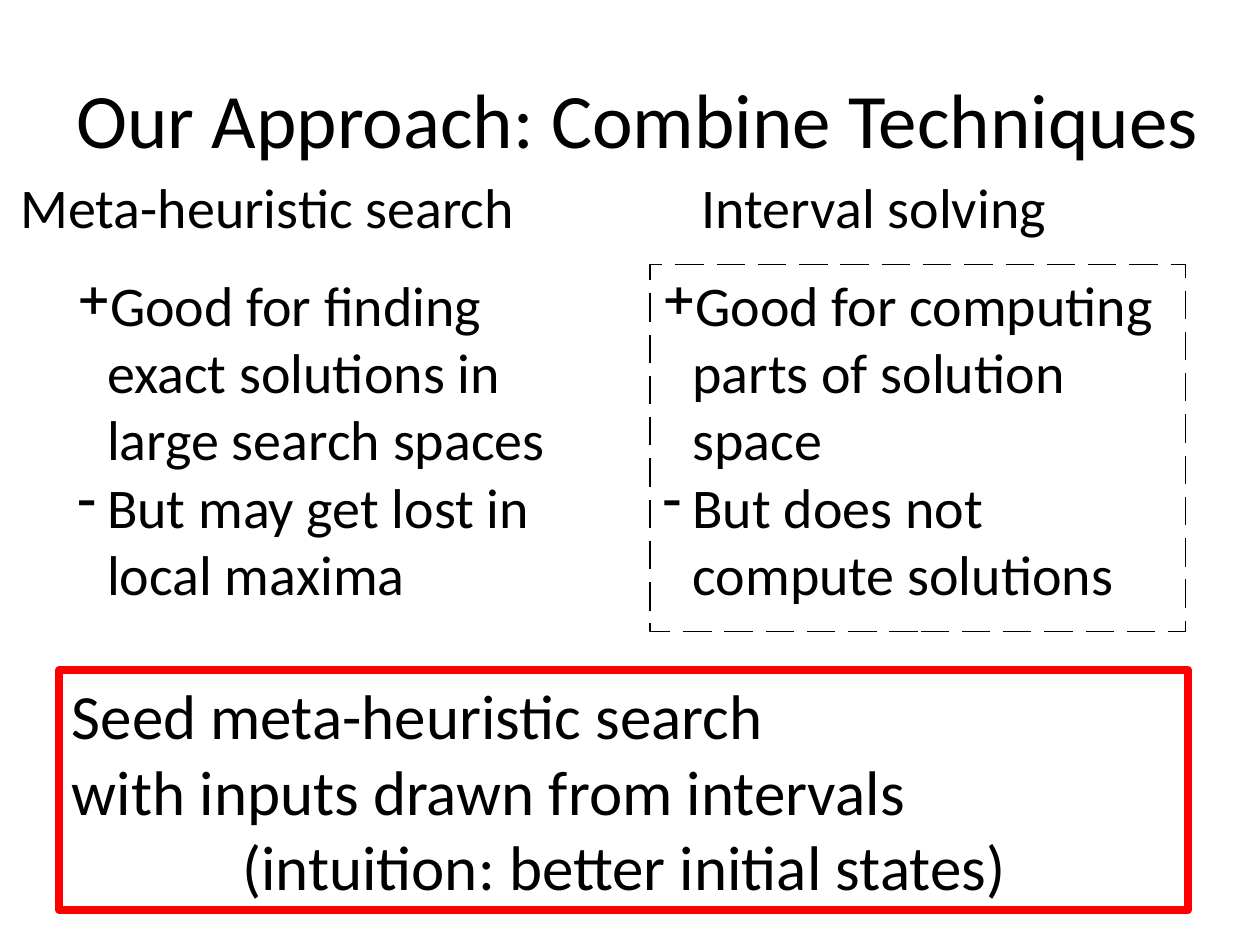
from dataclasses import dataclass
from typing import Any

from lxml.etree import SubElement
from pptx import Presentation
from pptx.dml.color import RGBColor
from pptx.enum.shapes import MSO_SHAPE
from pptx.enum.text import MSO_ANCHOR, MSO_AUTO_SIZE, PP_ALIGN
from pptx.oxml.ns import qn
from pptx.util import Pt


def color(value):
    return RGBColor.from_string(value)


@dataclass
class SlideBuilder:
    slide: Any
    font: str = "Calibri"
    ink: str = "000000"
    paper: str = "FFFFFF"
    accent: str = "FF0000"
    body_size: int = 32
    hanging: int = 17

    def place(self, shape, left, top, width, height):
        shape.left, shape.top = Pt(left), Pt(top)
        shape.width, shape.height = Pt(width), Pt(height)

    def format(self, para, size, alignment=PP_ALIGN.LEFT):
        para.alignment = alignment
        para.space_before = Pt(0)
        para.font.name = self.font
        para.font.size = Pt(size)
        para.font.color.rgb = color(self.ink)

    def fill_text(self, shape, texts, size, anchor=MSO_ANCHOR.TOP):
        frame = shape.text_frame
        frame.word_wrap = True
        frame.auto_size = MSO_AUTO_SIZE.NONE
        frame.vertical_anchor = anchor
        frame.text = "\n".join(texts)
        for para in frame.paragraphs:
            self.format(para, size)
        return frame.paragraphs

    def title(self, text, bounds):
        title = self.slide.shapes.title
        self.place(title, *bounds)
        paras = self.fill_text(title, [text], 44, MSO_ANCHOR.MIDDLE)
        paras[0].alignment = PP_ALIGN.CENTER

    def heading(self, text, bounds):
        box = self.slide.shapes.add_textbox(*map(Pt, bounds))
        self.fill_text(box, [text], self.body_size)

    def pros_and_cons(self, index, pro, con, bounds):
        body = self.slide.placeholders[index]
        self.place(body, *bounds)
        frame = body.text_frame
        frame.auto_size = MSO_AUTO_SIZE.NONE
        frame.text = f"{pro}\n{con}"
        for para, sign in zip(frame.paragraphs, "+-"):
            properties = para._p.get_or_add_pPr()
            properties.set("marL", str(Pt(self.hanging)))
            properties.set("indent", str(-Pt(self.hanging)))
            SubElement(properties, qn("a:buFontTx"))
            SubElement(properties, qn("a:buChar"), char=sign)
            self.format(para, self.body_size)
        return body

    def dashed_outline(self, shape):
        shape.line.color.rgb = color(self.ink)
        shape.line.width = Pt(0.75)
        dashes = SubElement(shape.line._get_or_add_ln(), qn("a:custDash"))
        SubElement(dashes, qn("a:ds"), d="2200000", sp="1000000")

    def conclusion(self, statement, intuition, bounds):
        box = self.slide.shapes.add_shape(MSO_SHAPE.RECTANGLE, *map(Pt, bounds))
        box.shadow.inherit = False
        box.fill.solid()
        box.fill.fore_color.rgb = color(self.paper)
        box.line.color.rgb = color(self.accent)
        box.line.width = Pt(4.5)
        SubElement(box.line._get_or_add_ln(), qn("a:round"))
        paras = self.fill_text(box, [statement, intuition], 36)
        paras[-1].alignment = PP_ALIGN.CENTER


def main():
    deck = Presentation()
    deck.slide_width, deck.slide_height = Pt(720), Pt(540)
    builder = SlideBuilder(deck.slides.add_slide(deck.slide_layouts[3]))

    builder.title("Our Approach: Combine Techniques", (34, 22, 661, 90))
    builder.pros_and_cons(
        1,
        "Good for finding exact solutions in large search spaces",
        "But may get lost in local maxima",
        (37, 151, 296, 210),
    )
    interval_body = builder.pros_and_cons(
        2,
        "Good for computing parts of solution space",
        "But does not compute solutions",
        (371.5, 151, 306, 210),
    )
    builder.dashed_outline(interval_body)
    builder.heading("Meta-heuristic search", (4.5, 95, 360, 45))
    builder.heading("Interval solving", (394, 95, 261, 45))
    builder.conclusion(
        "Seed meta-heuristic search\vwith inputs drawn from intervals",
        "(intuition: better initial states)",
        (34, 383, 645, 137),
    )
    deck.save("out.pptx")


if __name__ == "__main__":
    main()
